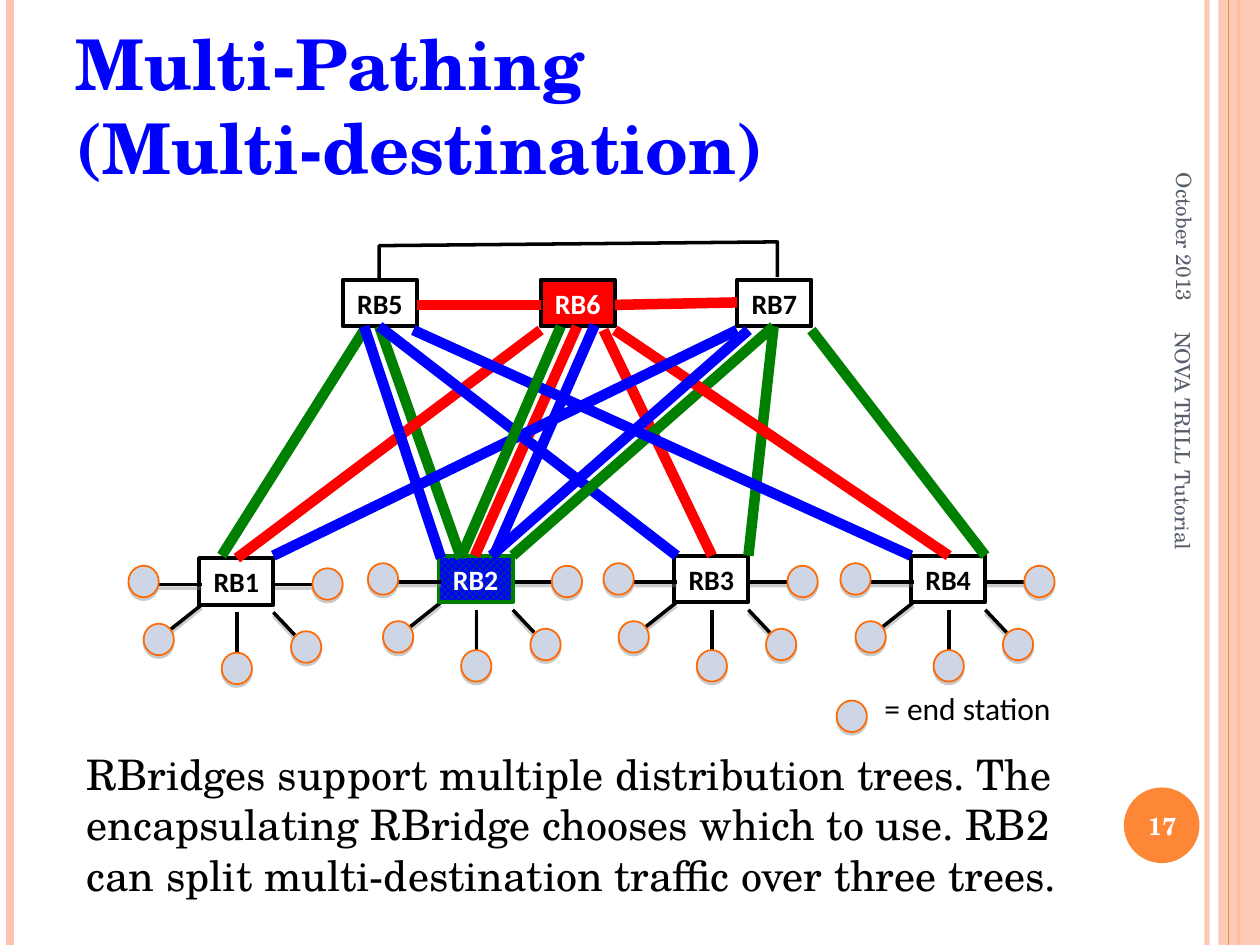
from lxml import etree
from pptx import Presentation
from pptx.dml.color import RGBColor
from pptx.enum import dml, shapes, text
from pptx.oxml.ns import qn
from pptx.util import Inches, Pt

SERIF, SANS = "TeX Gyre Schola", "Calibri"
ORANGE, PEACH, SLATE = "FE8637", "FEC3AE", "575F6D"
BLACK, WHITE = "000000", "FFFFFF"
RED, GREEN, BLUE = "FF0000", "008000", "0000FF"

TITLE = ["Multi-Pathing", "(Multi-destination)"]
BODY = ("RBridges support multiple distribution trees. The encapsulating RBridge "
        "chooses which to use. RB2 can split multi-destination traffic over three trees.")
RULES = [(9.58, PEACH, 3, 93), (0.08, PEACH, 4.5, 100), (9.83, ORANGE, 1.5, 100)]
LABELS = [
    ("October 2013", (8.3, 1.18, 2.2, 0.42), 12, SERIF, SLATE, False, "RIGHT", 90),
    ("NOVA TRILL Tutorial", (7.64, 4.09, 3.5, 0.4), 12, SERIF, SLATE, False, "LEFT", 90),
    ("17", (8.89, 6.27, 0.67, 0.57), 14, SERIF, WHITE, True, "CENTER", 0),
    (BODY, (0.59, 5.89, 8.3, 1.31), 24, SERIF, BLACK, False, "LEFT", 0),
    ("= end station", (6.92, 5.42, 2.17, 0.4), 18, SANS, BLACK, False, "LEFT", 0),
]
EDGE_BRIDGES = [("RB3", 5.35, 4.41, WHITE), ("RB2", 3.48, 4.41, "check"),
                ("RB4", 7.23, 4.41, WHITE), ("RB1", 1.58, 4.43, WHITE)]
CORE_BRIDGES = [("RB5", 2.72, 2.22, None), ("RB6", 4.29, 2.22, RED), ("RB7", 5.85, 2.22, WHITE)]
SPOKES = [
    ((0.9, 0.21), (0.56, 0.21), (0.9, 0.08)),
    ((0.3, 0.77), (0.3, 0.43), (0.18, 0.75)),
    ((0.02, 0.37), (-0.32, 0.64), (-0.44, 0.52)),
    ((0.76, 0.61), (0.59, 0.43), (0.73, 0.58)),
    ((0.02, 0.21), (-0.32, 0.21), (-0.56, 0.06)),
]
LINKS = [
    (GREEN, 3.01, 2.59, 3.66, 4.43), (GREEN, 6.44, 2.62, 7.82, 4.41),
    (GREEN, 6.14, 2.59, 5.94, 4.41), (RED, 4.29, 2.62, 1.88, 4.43),
    (RED, 4.58, 2.59, 3.77, 4.41), (RED, 4.79, 2.62, 5.65, 4.41),
    (BLUE, 3.01, 2.59, 5.37, 4.41), (GREEN, 6.14, 2.59, 4.07, 4.41),
    (BLUE, 3.28, 2.62, 7.23, 4.41), (RED, 4.88, 2.62, 7.53, 4.41),
    (BLUE, 5.85, 2.62, 2.17, 4.41), (RED, 3.31, 2.42, 4.29, 2.42),
    (RED, 4.88, 2.42, 5.85, 2.4), (GREEN, 4.45, 2.59, 3.66, 4.42),
    (GREEN, 2.89, 2.62, 1.76, 4.41), (BLUE, 2.89, 2.59, 3.5, 4.43),
    (BLUE, 5.94, 2.62, 3.9, 4.41), (BLUE, 4.72, 2.58, 3.92, 4.41),
]
TOP_LINK = [(3.01, 2.22), (3.01, 1.95), (6.17, 1.92), (6.17, 2.2)]


def rgb(color):
    return RGBColor.from_string(color)


def set_alpha(sp, percent):
    for clr in sp.element.spPr.iter(qn("a:srgbClr")):
        etree.SubElement(clr, qn("a:alpha"), val=str(percent * 1000))


def set_line(sp, color, width):
    sp.line.color.rgb = rgb(color)
    sp.line.width = Pt(width)


def add_shadow(effects, distance, percent):
    shadow = etree.SubElement(effects, qn("a:outerShdw"), blurRad="0",
                              dist=str(Pt(distance)), dir="5400000", rotWithShape="0")
    clr = etree.SubElement(shadow, qn("a:srgbClr"), val="808080")
    etree.SubElement(clr, qn("a:alpha"), val=str(percent * 1000))


def add_line(s, x1, y1, x2, y2, color, width, shadow=False):
    line = s.shapes.add_connector(shapes.MSO_CONNECTOR.STRAIGHT, *map(Inches, (x1, y1, x2, y2)))
    set_line(line, color, width)
    effects = etree.SubElement(line.element.spPr, qn("a:effectLst"))
    if shadow:
        add_shadow(effects, 2, 40)
    return line


def add_box(s, kind, box, fill, outline=None, width=1):
    sp = s.shapes.add_shape(kind, *map(Inches, box))
    sp.shadow.inherit = False
    if fill == "check":
        sp.fill.patterned()
        sp.fill.pattern = dml.MSO_PATTERN.LARGE_CHECKER_BOARD
        sp.fill.fore_color.rgb, sp.fill.back_color.rgb = rgb(GREEN), rgb(BLUE)
    elif fill:
        sp.fill.solid()
        sp.fill.fore_color.rgb = rgb(fill)
    else:
        sp.fill.background()
    if outline:
        set_line(sp, outline, width)
    else:
        sp.line.fill.background()
    return sp


def add_run(p, words, size, font, color, bold):
    r = p.add_run()
    r.text = words
    r.font.size, r.font.name, r.font.bold = Pt(size), font, bold
    r.font.color.rgb = rgb(color)


def add_label(s, words, box, size, font, color, bold, align, rotation):
    sp = s.shapes.add_textbox(*map(Inches, box))
    sp.rotation = rotation
    tf = sp.text_frame
    tf.word_wrap = True
    if font == SERIF and size < 24:
        tf.vertical_anchor = text.MSO_ANCHOR.MIDDLE
    p = tf.paragraphs[0]
    p.alignment = text.PP_ALIGN[align]
    add_run(p, words, size, font, color, bold)


def add_station(s, x, y):
    sp = add_box(s, shapes.MSO_SHAPE.OVAL, (x, y, 0.24, 0.25), "CED6E6", "FF6903")
    add_shadow(sp.element.spPr.find(qn("a:effectLst")), 1.6, 42)


def add_bridge(s, name, x, y, fill):
    outline = GREEN if fill == "check" else BLACK
    sp = add_box(s, shapes.MSO_SHAPE.RECTANGLE, (x, y, 0.59, 0.37), fill, outline, 2.25)
    tf = sp.text_frame
    tf.word_wrap = False
    p = tf.paragraphs[0]
    p.alignment = text.PP_ALIGN.CENTER
    add_run(p, name, 16, SANS, WHITE if fill in ("check", RED) else BLACK, True)


def add_spoke(s, x, y, start, end, station):
    add_line(s, x + start[0], y + start[1], x + end[0], y + end[1], BLACK, 2, True)
    add_station(s, x + station[0], y + station[1])


def add_title(s):
    title = s.shapes.title
    title.left, title.top, title.width, title.height = map(Inches, (0.5, 0.3, 8.17, 1.25))
    tf = title.text_frame
    tf.auto_size = text.MSO_AUTO_SIZE.NONE
    tf.vertical_anchor = text.MSO_ANCHOR.BOTTOM
    p = tf.paragraphs[0]
    p.alignment = text.PP_ALIGN.LEFT
    for i, words in enumerate(TITLE):
        if i:
            p.add_line_break()
        add_run(p, words, 40, SERIF, BLUE, True)


def main():
    prs = Presentation()
    prs.slide_width, prs.slide_height = Inches(10), Inches(7.5)
    s = prs.slides.add_slide(prs.slide_layouts[5])
    add_title(s)

    for x, color, width, alpha in RULES:
        set_alpha(add_line(s, x, 0, x, 7.5, color, width), alpha)
    band = add_box(s, shapes.MSO_SHAPE.RECTANGLE, (9.67, 0, 0.33, 7.5), PEACH)
    set_alpha(band, 87)
    add_line(s, 9.75, 0, 9.75, 7.5, ORANGE, 0.75)
    add_box(s, shapes.MSO_SHAPE.OVAL, (8.92, 6.25, 0.6, 0.6), ORANGE)

    for label in LABELS:
        add_label(s, *label)

    add_station(s, 6.64, 5.56)
    for name, x, y, fill in EDGE_BRIDGES:
        for spoke in SPOKES[:-1]:
            add_spoke(s, x, y, *spoke)
        add_bridge(s, name, x, y, fill)
        add_spoke(s, x, y, *SPOKES[-1])
    for bridge in CORE_BRIDGES:
        add_bridge(s, *bridge)
    for color, *ends in LINKS:
        add_line(s, *ends, color, 6)

    points = [(Inches(x), Inches(y)) for x, y in TOP_LINK]
    builder = s.shapes.build_freeform(*points[0])
    builder.add_line_segments(points[1:], close=False)
    link = builder.convert_to_shape()
    link.shadow.inherit = False
    link.fill.background()
    set_line(link, BLACK, 2)

    prs.save("out.pptx")


if __name__ == "__main__":
    main()
